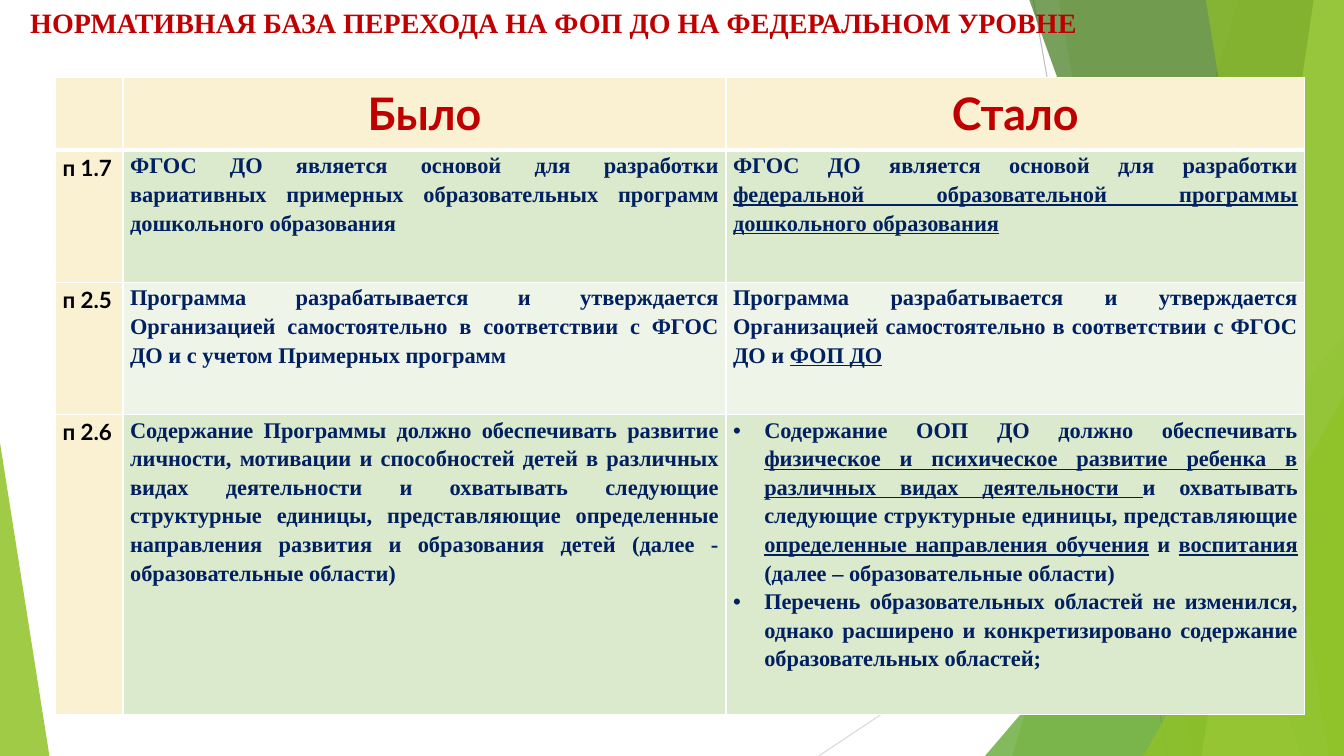
import pptx
import pptx.util
import pptx.dml.color
import pptx.enum.shapes
import pptx.enum.text
import pptx.oxml
import pptx.oxml.ns

ALIGN = pptx.enum.text.PP_ALIGN
KINDS = pptx.enum.shapes
qn = pptx.oxml.ns.qn

GREEN, RED, NAVY, CREAM = "90C226", "C00000", "002060", "FAF1D2"
SERIF, SANS = "Times New Roman", "Lato"
HEAD = {"name": SANS, "size": 32, "bold": True, "color": RED}
MARK = {"name": SANS, "size": 16, "bold": True, "color": "000000"}
BODY = {"name": SERIF, "size": 16, "bold": True, "color": NAVY}
TITLE = {"name": SERIF, "size": 20, "bold": True, "color": RED}


def paint(code):
    return pptx.dml.color.RGBColor.from_string(code)


def node(tag, **attrs):
    item = pptx.oxml.parse_xml(f"<a:{tag} {pptx.oxml.ns.nsdecls('a')}/>")
    for key, value in attrs.items():
        item.set(key, str(value))
    return item


class Deck:
    """Holds the style and the slide; lengths are percent of its sides."""

    def __init__(self, wide, high):
        self.prs = pptx.Presentation()
        self.prs.slide_width = pptx.util.Inches(wide)
        self.prs.slide_height = pptx.util.Inches(high)
        self.slide = self.prs.slides.add_slide(self.prs.slide_layouts[5])
        self.shapes = self.slide.shapes

    def x(self, share):
        return round(self.prs.slide_width * share / 100)

    def y(self, share):
        return round(self.prs.slide_height * share / 100)

    def line(self, x1, y1, x2, y2, color):
        line = self.shapes.add_connector(
            KINDS.MSO_CONNECTOR.STRAIGHT,
            self.x(x1), self.y(y1), self.x(x2), self.y(y2))
        line.line.color.rgb = paint(color)
        line.line.width = pptx.util.Pt(0.75)
        line.element.spPr.append(node("effectLst"))

    def tint(self, shape, color, alpha):
        shape.shadow.inherit = False
        shape.fill.solid()
        shape.fill.fore_color.rgb = paint(color)
        tone = shape.element.spPr.find(".//" + qn("a:srgbClr"))
        tone.append(node("alpha", val=alpha * 1000))
        shape.line.fill.background()

    def band(self, top, foot, color, alpha):
        """Full-height band from a slanted left edge to the right side."""
        form = self.shapes.build_freeform(self.x(top), 0)
        form.add_line_segments([
            (self.x(100), 0), (self.x(100), self.y(100)),
            (self.x(foot), self.y(100))])
        self.tint(form.convert_to_shape(), color, alpha)

    def wedge(self, left, right, top, peak, color, alpha):
        """Triangle that stands on the bottom edge."""
        shape = self.shapes.add_shape(
            KINDS.MSO_SHAPE.ISOSCELES_TRIANGLE, self.x(left), self.y(top),
            self.x(right - left), self.y(100 - top))
        shape.adjustments[0] = peak
        self.tint(shape, color, alpha)

    def style(self, font, form):
        for key, value in form.items():
            if key == "color":
                font.color.rgb = paint(value)
            else:
                setattr(font, key,
                        pptx.util.Pt(value) if key == "size" else value)

    def words(self, para, text, form):
        """Parts between underscores are underlined."""
        for spot, part in enumerate(text.split("_")):
            if part:
                run = para.add_run()
                run.text = part
                self.style(run.font, form)
                if spot % 2:
                    run.font.underline = True

    def title(self, text, left, top, wide, high):
        box = self.shapes.title
        place = {"left": self.x(left), "top": self.y(top),
                 "width": self.x(wide), "height": self.y(high)}
        for key, value in place.items():
            setattr(box, key, value)
        frame = box.text_frame
        look = {"word_wrap": True,
                "vertical_anchor": pptx.enum.text.MSO_ANCHOR.TOP,
                "auto_size": pptx.enum.text.MSO_AUTO_SIZE.SHAPE_TO_FIT_TEXT}
        for key, value in look.items():
            setattr(frame, key, value)
        frame.paragraphs[0].alignment = ALIGN.LEFT
        self.words(frame.paragraphs[0], text, TITLE)
        # Bring the title in front of the backdrop
        self.shapes.element.append(box.element)

    def cell(self, cell, items, form, align, fill, edges):
        pad = pptx.util.Inches(0.07)
        for key, value in {"margin_left": pad, "margin_right": pad,
                           "margin_top": 0, "margin_bottom": 0}.items():
            setattr(cell, key, value)
        props = cell._tc.get_or_add_tcPr()
        for side, width in edges.items():
            edge = node("ln" + side, w=pptx.util.Pt(width))
            solid = node("solidFill")
            solid.append(node("srgbClr", val="FFFFFF"))
            edge.append(solid)
            props.append(edge)
        cell.fill.solid()
        cell.fill.fore_color.rgb = paint(fill)
        frame = cell.text_frame
        for spot, text in enumerate(items):
            para = frame.add_paragraph() if spot else frame.paragraphs[0]
            para.alignment, para.line_spacing = align, 1.15
            if text.startswith("•"):
                prop = para._p.get_or_add_pPr()
                dent = pptx.util.Inches(0.31)
                prop.set("marL", str(dent))
                prop.set("indent", str(-dent))
                prop.append(node("buFont", typeface="Arial"))
                prop.append(node("buChar", char="•"))
            self.words(para, text.lstrip("•"), form)

    def table(self, left, top, cols, rows, data):
        grid = self.shapes.add_table(
            len(rows), len(cols), self.x(left), self.y(top),
            self.x(sum(cols)), self.y(sum(rows))).table
        for col, wide in zip(grid.columns, cols):
            col.width = self.x(wide)
        for row, high in zip(grid.rows, rows):
            row.height = self.y(high)
        for r, line in enumerate(data):
            edges = {"L": 1, "R": 1, "T": 3 if r == 1 else 1,
                     "B": 1 if r else 3}
            for c, items in enumerate(line):
                form = HEAD if r == 0 else BODY if c else MARK
                align = ALIGN.JUSTIFY if r else ALIGN.CENTER
                band = "DBE9CD" if r % 2 else "EEF4E8"
                fill = band if r and c else CREAM
                self.cell(grid.cell(r, c), items, form, align, fill, edges)


ROWS = [
    [[], ["Было"], ["Стало"]],
    [["п 1.7"],
     ["ФГОС ДО является основой для разработки вариативных примерных "
      "образовательных программ дошкольного образования"],
     ["ФГОС ДО является основой для разработки _федеральной "
      "образовательной программы дошкольного образования_"]],
    [["п 2.5"],
     ["Программа разрабатывается и утверждается Организацией самостоятельно "
      "в соответствии с ФГОС ДО и с учетом Примерных программ"],
     ["Программа разрабатывается и утверждается Организацией самостоятельно "
      "в соответствии с ФГОС ДО и _ФОП ДО_"]],
    [["п 2.6"],
     ["Содержание Программы должно обеспечивать развитие личности, мотивации "
      "и способностей детей в различных видах деятельности и охватывать "
      "следующие структурные единицы, представляющие определенные "
      "направления развития и образования детей (далее - образовательные "
      "области)"],
     ["•Содержание ООП ДО должно обеспечивать _физическое и психическое "
      "развитие ребенка в различных видах деятельности _и охватывать "
      "следующие структурные единицы, представляющие _определенные "
      "направления обучения_ и _воспитания_ (далее – образовательные "
      "области)",
      "•Перечень образовательных областей не изменился, однако расширено и "
      "конкретизировано содержание образовательных областей;"]],
]


def main():
    deck = Deck(13.33, 7.5)

    # Backdrop: thin lines, slanted bands, corner wedges
    deck.line(76.89, 0, 86.87, 100, "BFBFBF")
    deck.line(100, 53.73, 60.92, 100, "D9D9D9")
    deck.band(92.12, 75.32, GREEN, 30)
    deck.band(78.77, 88.75, GREEN, 20)
    deck.wedge(73.29, 100, 44.4, 1, "54A021", 72)
    deck.band(76.59, 96.85, "3F7819", 70)
    deck.band(97.75, 89.42, "C0E474", 70)
    deck.band(89.72, 98.87, GREEN, 65)
    deck.wedge(85.07, 100, 52.4, 1, GREEN, 80)
    deck.wedge(0, 3.68, 58.53, 0, GREEN, 85)

    # Title
    deck.title("НОРМАТИВНАЯ БАЗА ПЕРЕХОДА НА ФОП ДО НА ФЕДЕРАЛЬНОМ УРОВНЕ",
               1.5, 0, 95.27, 5.87)

    # Table of changes
    deck.table(4.13, 10.27, [5.03, 44.86, 43.06],
               [9.6, 17.47, 17.47, 39.73], ROWS)

    deck.prs.save("out.pptx")


if __name__ == "__main__":
    main()
